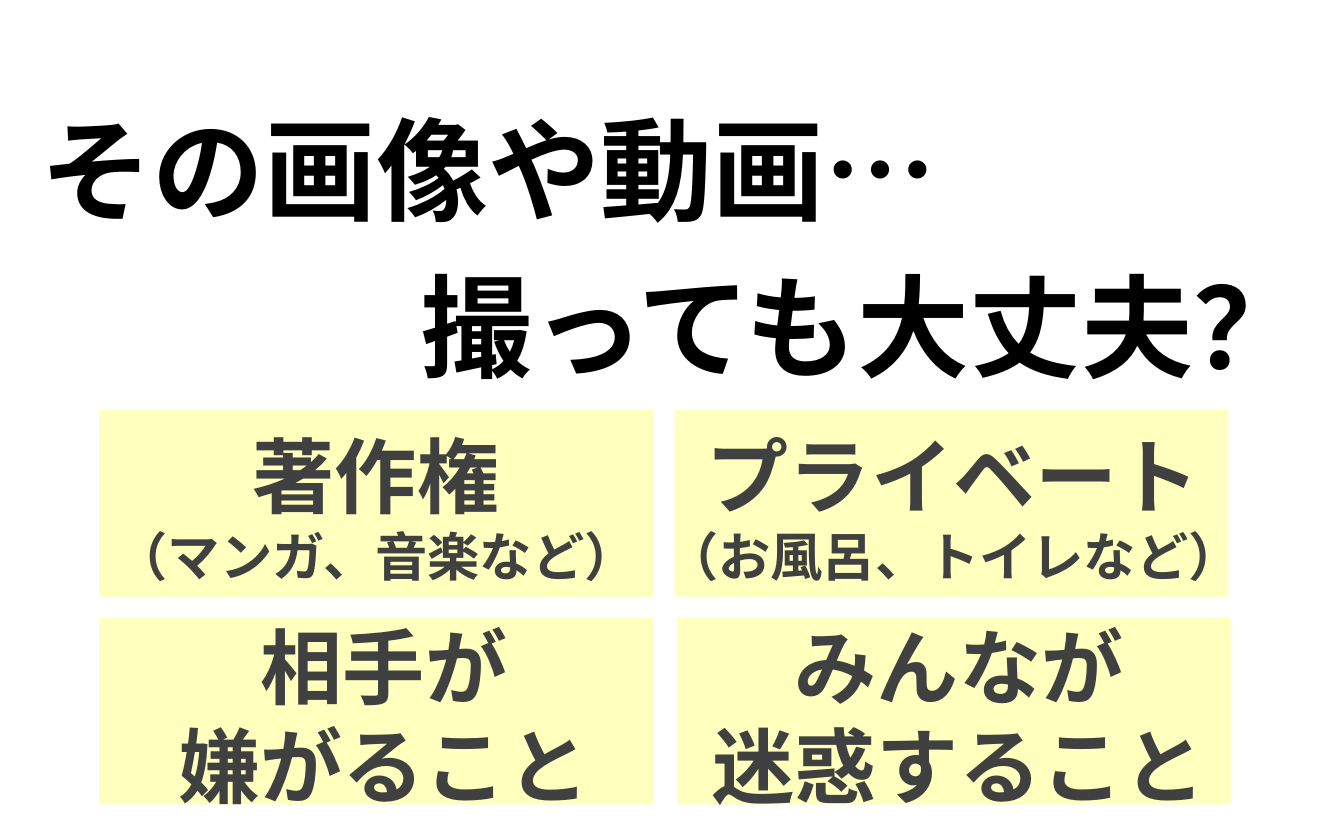
from dataclasses import dataclass

import pptx
import pptx.dml.color
import pptx.enum.shapes
import pptx.enum.text
import pptx.oxml
import pptx.oxml.ns
import pptx.util
from pptx.util import Cm

BLACK = pptx.dml.color.RGBColor(0x00, 0x00, 0x00)
DARK_GRAY = pptx.dml.color.RGBColor(0x40, 0x40, 0x40)
PALE_YELLOW = pptx.dml.color.RGBColor(0xFF, 0xFF, 0xBE)
FONT = "Noto Sans CJK JP"
ALIGN = pptx.enum.text.PP_ALIGN
CARD_WIDTH, CARD_HEIGHT = 10.46, 3.53


@dataclass(frozen=True)
class Line:
    text: str
    size: int
    align: ALIGN = ALIGN.CENTER
    spacing: int | None = None


@dataclass(frozen=True)
class Card:
    left: float
    top: float
    text_left: float
    text_top: float
    text_width: float
    text_height: float
    lines: tuple[Line, ...]


TITLE = (
    Line("その画像や動画…", 60, ALIGN.LEFT, 84),
    Line("撮っても大丈夫？", 60, ALIGN.RIGHT, 84),
)
CARDS = (
    Card(1.88, 7.75, 1.88, 7.92, 10.46, 3.33,
         (Line("著作権", 44), Line("（マンガ、音楽など）", 28))),
    Card(12.75, 7.75, 12.32, 7.92, 11.4, 3.33,
         (Line("プライベート", 44), Line("（お風呂、トイレなど）", 28))),
    Card(1.88, 11.68, 2.03, 11.53, 10.46, 4.01,
         (Line("相手が", 44), Line("嫌がること", 44))),
    Card(12.8, 11.68, 12.9, 11.53, 10.46, 4.01,
         (Line("みんなが", 44), Line("迷惑すること", 44))),
)


def write_lines(frame: pptx.text.text.TextFrame, lines: tuple[Line, ...],
                color: pptx.dml.color.RGBColor) -> None:
    frame.word_wrap = True
    frame.auto_size = pptx.enum.text.MSO_AUTO_SIZE.NONE
    frame.vertical_anchor = pptx.enum.text.MSO_ANCHOR.TOP
    for index, line in enumerate(lines):
        para = frame.add_paragraph() if index else frame.paragraphs[0]
        para.text = line.text
        para.alignment = line.align
        if line.spacing:
            para.line_spacing = pptx.util.Pt(line.spacing)
        para.font.name = FONT
        para.font.size = pptx.util.Pt(line.size)
        para.font.bold = True
        para.font.color.rgb = color
        latin = para._p.pPr.find(".//" + pptx.oxml.ns.qn("a:latin"))
        east_asian = pptx.oxml.parse_xml(
            f'<a:ea {pptx.oxml.ns.nsdecls("a")} typeface="{FONT}"/>')
        latin.addnext(east_asian)


def draw_panel(page: pptx.slide.Slide, card: Card) -> None:
    panel = page.shapes.add_shape(
        pptx.enum.shapes.MSO_SHAPE.RECTANGLE,
        Cm(card.left), Cm(card.top), Cm(CARD_WIDTH), Cm(CARD_HEIGHT))
    panel.shadow.inherit = False
    panel.fill.solid()
    panel.fill.fore_color.rgb = PALE_YELLOW
    panel.line.fill.background()


def draw_text(page: pptx.slide.Slide, card: Card) -> None:
    box = page.shapes.add_textbox(
        Cm(card.text_left), Cm(card.text_top),
        Cm(card.text_width), Cm(card.text_height))
    write_lines(box.text_frame, card.lines, DARK_GRAY)


def main() -> None:
    deck = pptx.Presentation()
    deck.slide_width, deck.slide_height = Cm(25.4), Cm(15.88)
    page = deck.slides.add_slide(deck.slide_layouts[5])
    title = page.shapes.title
    title.left, title.top = Cm(0.51), Cm(1.35)
    title.width, title.height = Cm(24.41), Cm(6.25)
    write_lines(title.text_frame, TITLE, BLACK)
    for card in CARDS:
        draw_panel(page, card)
    for card in CARDS:
        draw_text(page, card)
    deck.save("out.pptx")


if __name__ == "__main__":
    main()
